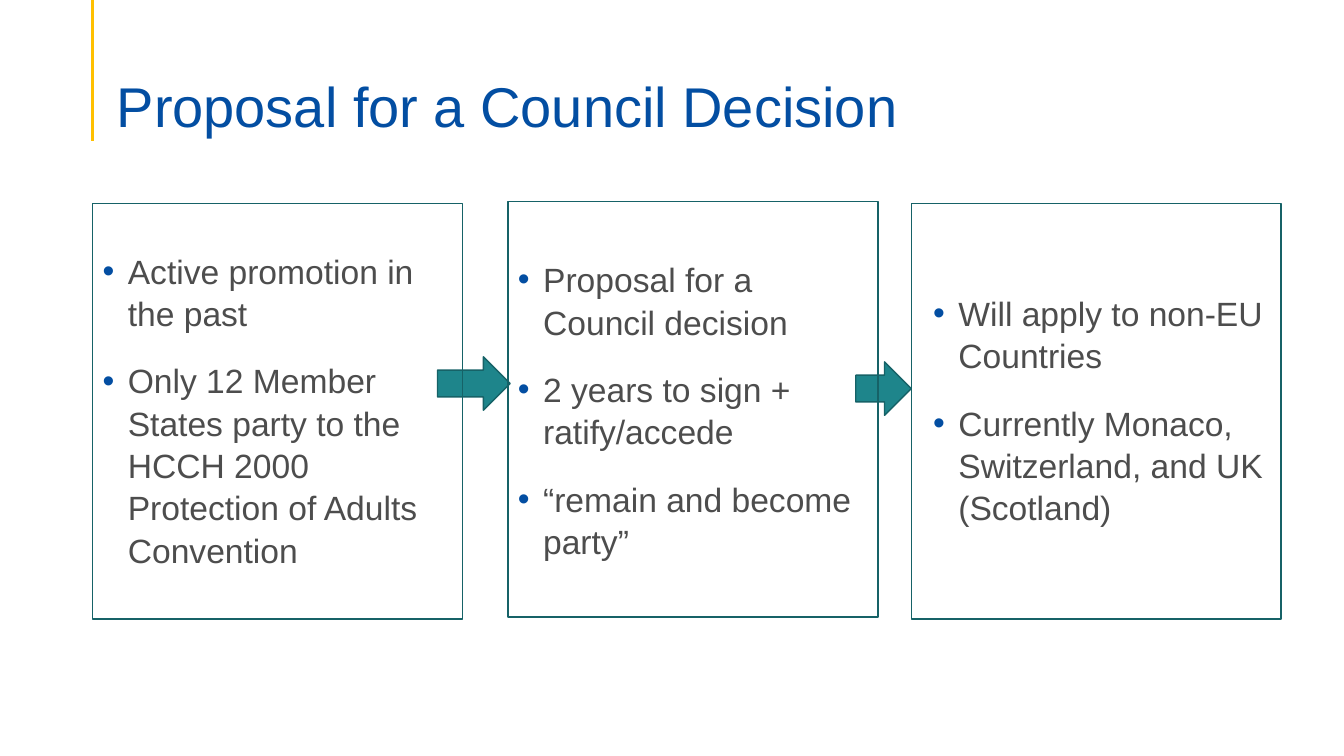
from lxml.etree import SubElement
from pptx import Presentation
from pptx.dml.color import RGBColor
from pptx.enum.shapes import MSO_CONNECTOR, MSO_SHAPE
from pptx.enum.text import MSO_ANCHOR
from pptx.oxml.ns import qn
from pptx.util import Pt

TITLE = "Proposal for a Council Decision"
# Frame left and top, text left, bullet points
PANELS = [
    (66.24, 145.44, 66.24, [
        "Active promotion in the past",
        "Only 12 Member States party to the HCCH 2000 Protection of Adults Convention",
    ]),
    (362.88, 144, 362.88, [
        "Proposal for a Council decision",
        "2 years to sign + ratify/accede",
        "“remain and become party”",
    ]),
    (650.88, 145.44, 659.52, [
        "Will apply to non-EU Countries",
        "Currently Monaco, Switzerland, and UK (Scotland)",
    ]),
]
ARROWS = [(312.48, 254.88, 51.84), (611.28, 258.48, 39.6)]  # left, top, width
ARROW_HEIGHT = 38.16
PANEL_WIDTH, PANEL_HEIGHT, TEXT_TOP = 264.24, 296.64, 144
RULE_X, RULE_BOTTOM = 66.24, 100.8
BULLET_INDENT = 18
COLORS = {"blue": "034EA2", "text": "4D4D4D", "teal": "1E858B",
          "outline": "166267", "gold": "FFC000"}


def color(name):
    return RGBColor.from_string(COLORS[name])


def add_bullet(para):
    properties = para._p.get_or_add_pPr()
    properties.set("marL", str(Pt(BULLET_INDENT)))
    properties.set("indent", str(-Pt(BULLET_INDENT)))
    bullet_color = SubElement(properties, qn("a:buClr"))
    SubElement(bullet_color, qn("a:srgbClr"), val=COLORS["blue"])
    SubElement(properties, qn("a:buFont"), typeface="Arial")
    SubElement(properties, qn("a:buChar"), char="•")


def add_text(page, lines, left, top, width, height, *, size, ink, anchor,
             spacing, after=0, bottom=3.6, bulleted=False):
    box = page.shapes.add_textbox(Pt(left), Pt(top), Pt(width), Pt(height))
    frame = box.text_frame
    frame.word_wrap = True
    frame.vertical_anchor = anchor
    frame.margin_bottom = Pt(bottom)
    for index, line in enumerate(lines):
        para = frame.add_paragraph() if index else frame.paragraphs[0]
        if bulleted:
            add_bullet(para)
        para.line_spacing = spacing
        para.space_after = Pt(after)
        span = para.add_run()
        span.text = line
        span.font.name = "Arial"
        span.font.size = Pt(size)
        span.font.color.rgb = color(ink)


def add_outlined(page, kind, left, top, width, height, fill=None):
    shape = page.shapes.add_shape(kind, Pt(left), Pt(top), Pt(width), Pt(height))
    shape.shadow.inherit = False
    if fill:
        shape.fill.solid()
        shape.fill.fore_color.rgb = color(fill)
    else:
        shape.fill.background()
    shape.line.color.rgb = color("outline")
    shape.line.width = Pt(1)


deck = Presentation()
deck.slide_width, deck.slide_height = Pt(960), Pt(540)
page = deck.slides.add_slide(deck.slide_layouts[6])

rule = page.shapes.add_connector(
    MSO_CONNECTOR.STRAIGHT, Pt(RULE_X), Pt(0), Pt(RULE_X), Pt(RULE_BOTTOM))
rule.line.color.rgb = color("gold")
rule.line.width = Pt(2.25)
SubElement(rule._element.spPr, qn("a:effectLst"))

add_text(page, [TITLE], 76.32, 38.16, 828, 61.92, size=40, ink="blue",
         anchor=MSO_ANCHOR.BOTTOM, spacing=0.9, bottom=0)
for left, top, width in ARROWS:
    add_outlined(page, MSO_SHAPE.RIGHT_ARROW, left, top, width, ARROW_HEIGHT, "teal")
for left, top, text_left, points in PANELS:
    add_outlined(page, MSO_SHAPE.RECTANGLE, left, top, PANEL_WIDTH, PANEL_HEIGHT)
    add_text(page, points, text_left, TEXT_TOP, PANEL_WIDTH, PANEL_HEIGHT,
             size=24, ink="text", anchor=MSO_ANCHOR.MIDDLE, spacing=1.05,
             after=18, bulleted=True)

deck.save("out.pptx")
